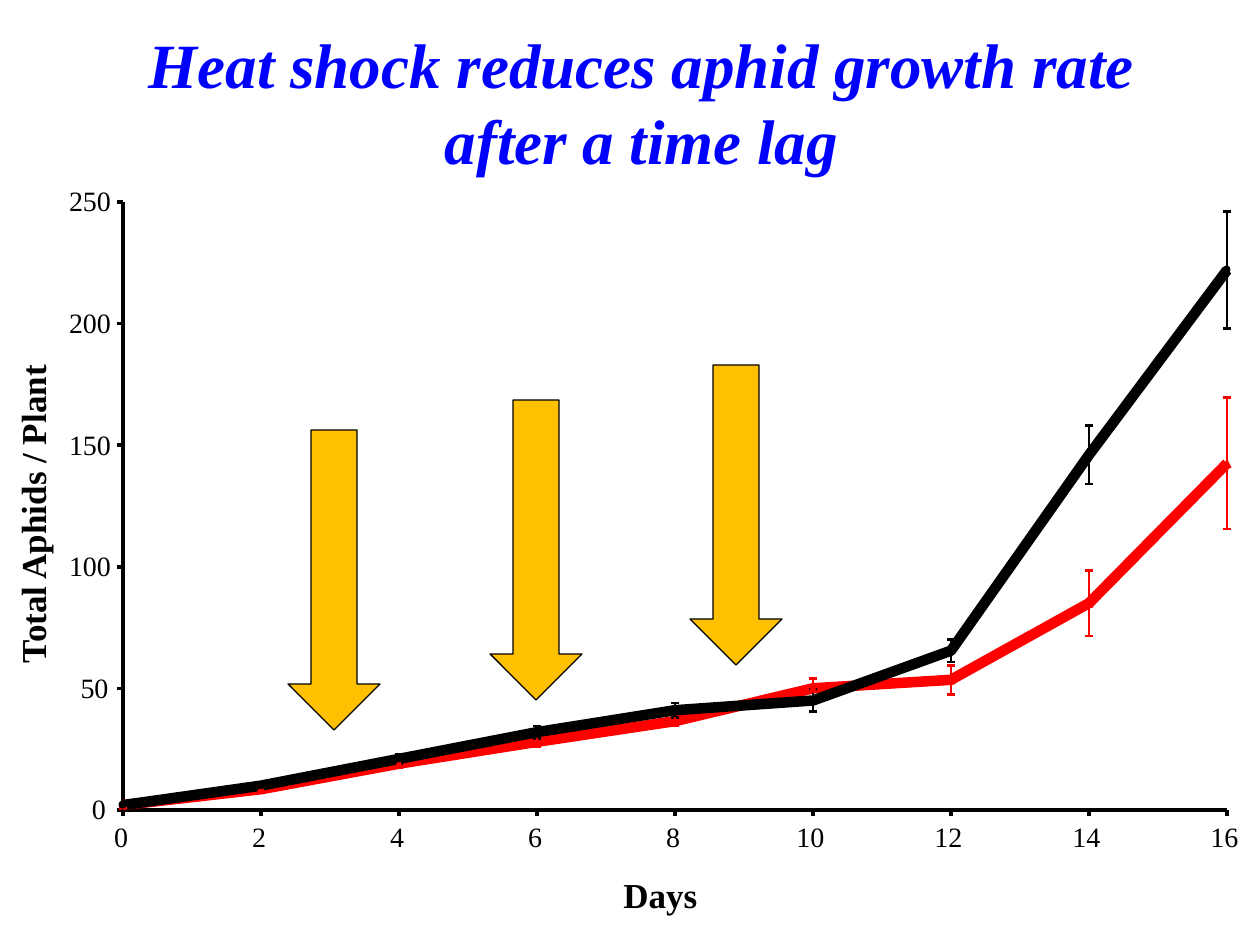
from lxml import etree
from pptx import Presentation
from pptx.dml.color import RGBColor
from pptx.enum.shapes import MSO_CONNECTOR, MSO_SHAPE
from pptx.enum.text import MSO_ANCHOR, MSO_AUTO_SIZE, PP_ALIGN
from pptx.oxml.ns import qn
from pptx.util import Pt

STRAIGHT = MSO_CONNECTOR.STRAIGHT
OVAL, ARROW = MSO_SHAPE.OVAL, MSO_SHAPE.DOWN_ARROW
MIDDLE, CENTER = MSO_ANCHOR.MIDDLE, PP_ALIGN.CENTER
GROW, FIXED = MSO_AUTO_SIZE.SHAPE_TO_FIT_TEXT, MSO_AUTO_SIZE.NONE

TITLE = "Heat shock reduces aphid growth rate after a time lag"
FONT = "Times New Roman"
BLACK, RED, BLUE, GOLD = "000000", "FF0000", "0000FF", "FFC000"
HEAD = dict(name=FONT, size=Pt(36), bold=True, italic=True)
LABEL = dict(name=FONT, size=Pt(20), bold=True)
TICK = dict(name=FONT, size=Pt(16))

DAYS = range(0, 17, 2)
COUNTS = range(0, 251, 50)
SERIES = [
    (RED, [2, 8.5, 19, 28, 36.5, 50, 53.5, 85, 142.5],
     [0.5, 1.2, 1.5, 2, 2, 4, 6, 13.5, 27]),
    (BLACK, [2, 10, 21, 32, 41, 45, 65.5, 146, 222],
     [0.5, 1.2, 2, 2.5, 3, 4.5, 4.7, 12, 24]),
]
SHOCKS = [(288, 430), (490, 400), (690, 365)]

SCALE = 914400 / 126
LEFT, RIGHT, TOP, BASE = 123, 1227, 202, 810
MARK, STUB, DIGIT = 4, 6, 15.5


def emu(*px):
    return [round(p * SCALE) for p in px]


def color(code):
    return RGBColor.from_string(code)


def day_x(day):
    return LEFT + (RIGHT - LEFT) * day / DAYS[-1]


def count_y(count):
    return BASE - (BASE - TOP) * count / COUNTS[-1]


def style(font, look, code):
    for key, value in look.items():
        setattr(font, key, value)
    font.color.rgb = color(code)


def paint(shape, fill, line, width):
    shape.shadow.inherit = False
    if fill:
        shape.fill.solid()
        shape.fill.fore_color.rgb = color(fill)
    else:
        shape.fill.background()
    shape.line.color.rgb = color(line)
    shape.line.width = Pt(width)


def rule(x1, y1, x2, y2, code=BLACK, width=0):
    line = shapes.add_connector(STRAIGHT, *emu(x1, y1, x2, y2))
    line.line.color.rgb = color(code)
    line.line.width = Pt(width)
    etree.SubElement(line._element.spPr, qn("a:effectLst"))


def outline(points, fill, code, width, close):
    start, *rest = [emu(*p) for p in points]
    pen = shapes.build_freeform(*start)
    pen.add_line_segments(rest, close=close)
    paint(pen.convert_to_shape(), fill, code, width)


def label(text, x, y, w, h, look, inset=True):
    box = shapes.add_textbox(*emu(x, y, w, h))
    frame = box.text_frame
    frame.word_wrap = False
    frame.auto_size = GROW
    if not inset:
        for side in ("left", "top", "right", "bottom"):
            setattr(frame, "margin_" + side, 0)
    frame.text = text
    style(frame.paragraphs[0].runs[0].font, look, BLACK)
    return box


def axes():
    rule(LEFT, TOP, LEFT, BASE)
    for count in COUNTS:
        rule(LEFT - STUB, count_y(count), LEFT, count_y(count))
    rule(LEFT, BASE, RIGHT, BASE)
    for day in DAYS:
        rule(day_x(day), BASE + STUB, day_x(day), BASE)


def curve(code, means, errors):
    outline([(day_x(d), count_y(m)) for d, m in zip(DAYS, means)],
            None, code, 6, False)
    for sign in (1, -1):
        for day, mean, error in zip(DAYS, means, errors):
            if day == 0 and sign > 0:
                continue
            x, end = day_x(day), count_y(mean + sign * error)
            rule(x, count_y(mean), x, end, code, 1.5)
            rule(x - MARK, end, x + MARK, end, code, 1.5)


def marks(code, means):
    for day, mean in zip(DAYS, means):
        x, y = day_x(day), count_y(mean)
        if code == RED:
            corners = [(x, y - MARK), (x + MARK, y + MARK), (x - MARK, y + MARK)]
            outline(corners, code, code, 0.5, True)
        else:
            dot = shapes.add_shape(OVAL, *emu(x - MARK, y - MARK, 7, 7))
            paint(dot, code, code, 0.5)


def scales():
    for count in COUNTS:
        text = str(count)
        size = len(text)
        label(text, 92 - 11.5 * (size - 1), count_y(count) - 18,
              DIGIT * size, 34, TICK, False)
    for day in DAYS:
        wide = DIGIT * len(str(day))
        label(str(day), day_x(day) - 1 - wide / 2, 820, wide, 34, TICK, False)


deck = Presentation()
deck.slide_width, deck.slide_height = emu(1260, 945)
slide = deck.slides.add_slide(deck.slide_layouts[5])
shapes = slide.shapes

title = shapes.title
title.left, title.top, title.width, title.height = emu(106, 23, 1071, 157)
title.text_frame.text = TITLE
title.text_frame.auto_size = FIXED
title.text_frame.word_wrap = True
title.text_frame.vertical_anchor = MIDDLE
head = title.text_frame.paragraphs[0]
head.alignment = CENTER
style(head.runs[0].font, HEAD, BLUE)

axes()
for code, means, errors in SERIES:
    curve(code, means, errors)
for code, means, errors in SERIES:
    marks(code, means)
scales()
label("Total Aphids / Plant", -131, 479, 326, 42, LABEL, False).rotation = 270
label("Days", 611, 867, 110, 54, LABEL)
for x, y in SHOCKS:
    paint(shapes.add_shape(ARROW, *emu(x, y, 92, 300)), GOLD, BLACK, 0.75)

deck.save("out.pptx")
